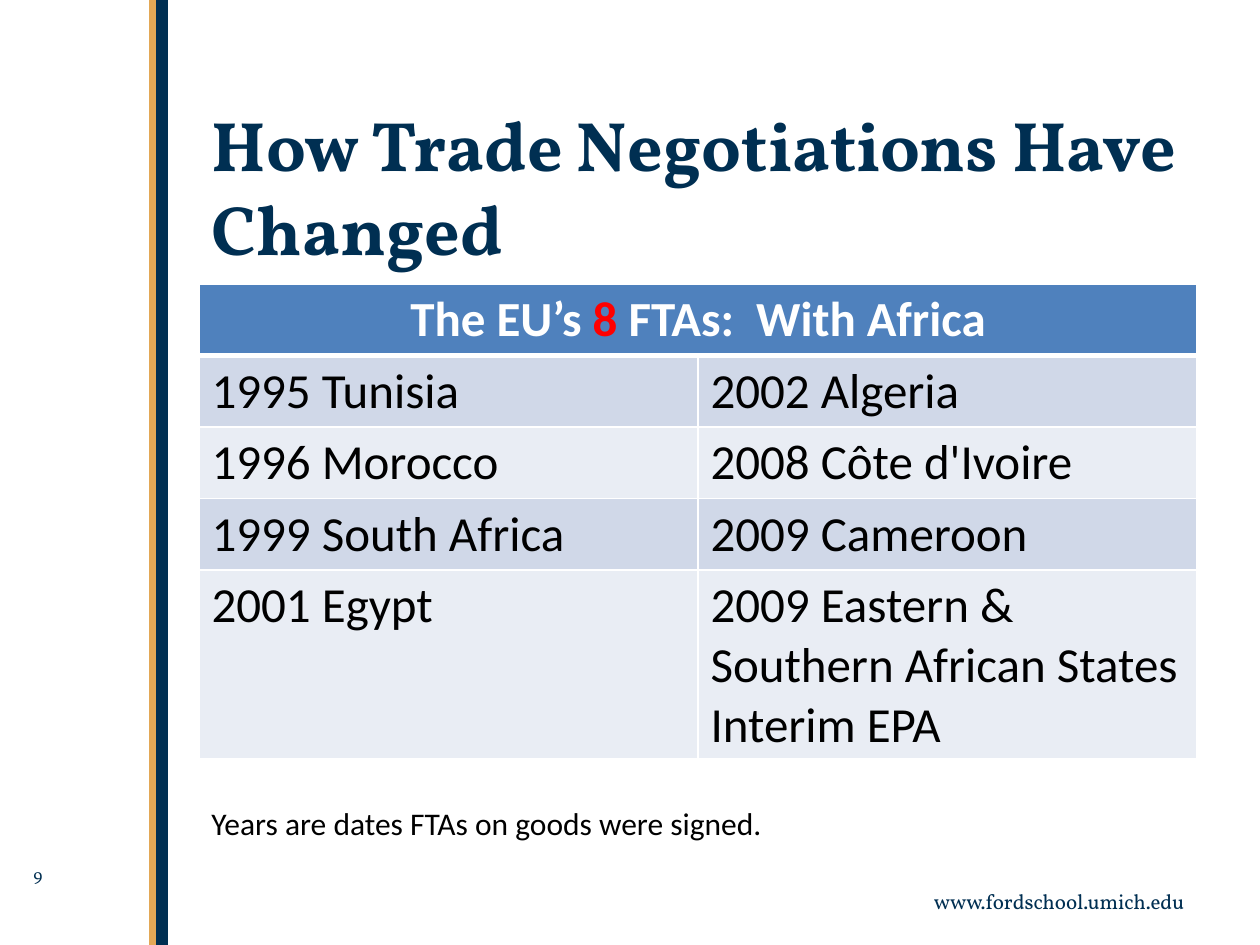
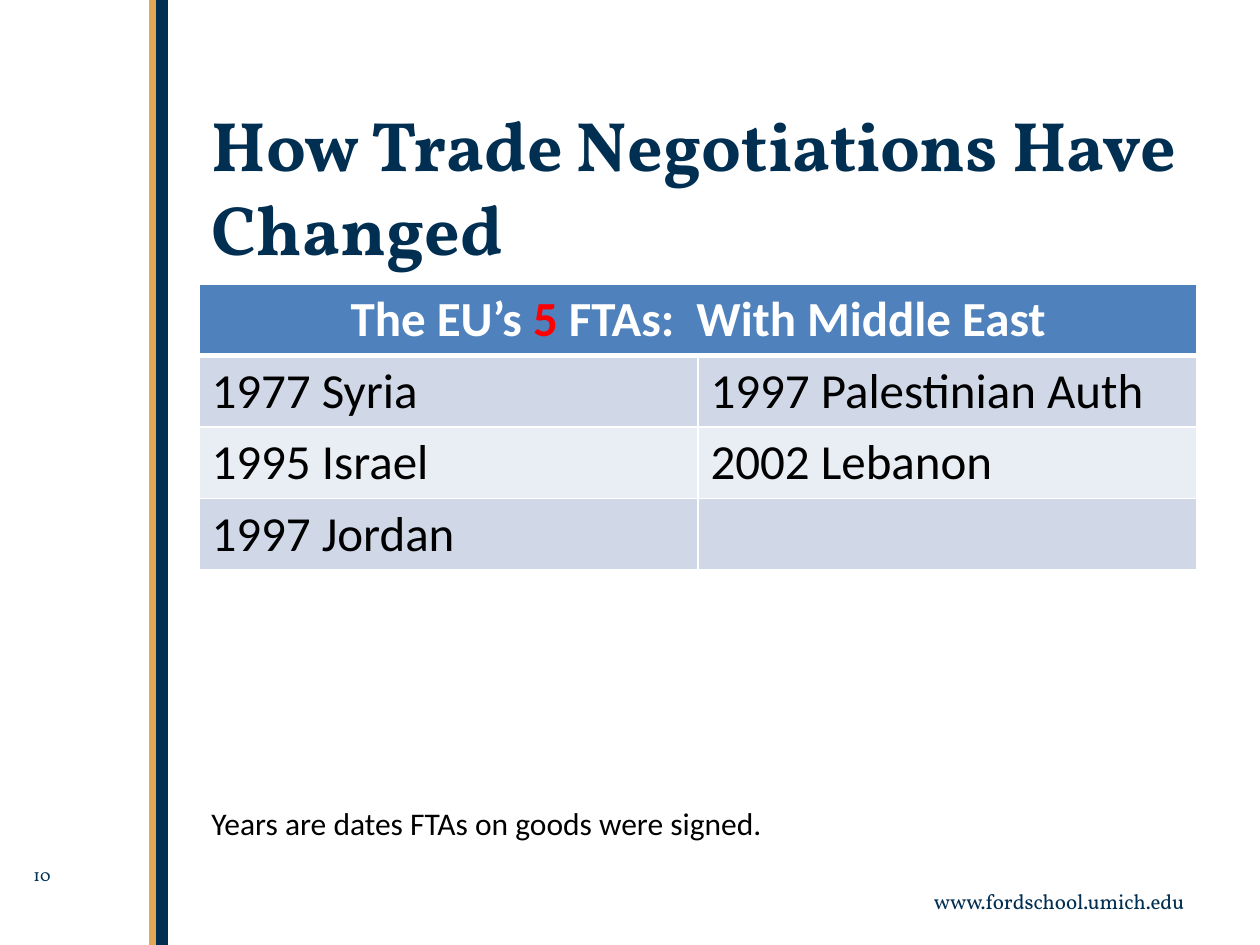
from lxml.etree import SubElement
from pptx import Presentation
from pptx.dml.color import RGBColor
from pptx.enum.shapes import MSO_SHAPE as SHAPE
from pptx.enum.text import MSO_ANCHOR as ANCHOR, MSO_AUTO_SIZE as AUTO, PP_ALIGN as ALIGN
from pptx.oxml.ns import qn
from pptx.util import Emu, Pt

PX_PER_INCH = 126
COLORS = {
    "navy": "002F52", "gold": "E3A856", "white": "FFFFFF", "black": "000000",
    "red": "FF0000", "header": "4F81BD", "odd": "D0D8E8", "even": "E9EDF4",
}
TITLE = dict(name="Vollkorn", size=Pt(40), bold=True)
FOOTER = dict(name="Vollkorn", size=Pt(12))
NUMBER = dict(name="Vollkorn", size=Pt(10))
NOTE = dict(name="Calibri", size=Pt(18))
HEADER = dict(name="Calibri", size=Pt(28), bold=True)
BODY = dict(name="Calibri", size=Pt(28), bold=False)
LEFT, WIDTH, ROW = 199, 998, 71

SLIDES = [
    (9, 8, "Africa", [
        ("1995 Tunisia", "2002 Algeria"),
        ("1996 Morocco", "2008 Côte d'Ivoire"),
        ("1999 South Africa", "2009 Cameroon"),
        ("2001 Egypt", "2009 Eastern & Southern African States Interim EPA"),
    ], 189),
    (10, 5, "Middle East", [
        ("1977 Syria", "1997 Palestinian Auth"),
        ("1995 Israel", "2002 Lebanon"),
        ("1997 Jordan", ""),
    ], ROW),
]


def px(n):
    return Emu(round(n * 914400 / PX_PER_INCH))


def rgb(color):
    return RGBColor.from_string(COLORS[color])


def add_run(p, text, fmt, color):
    r = p.add_run()
    r.text = text
    for name, value in fmt.items():
        setattr(r.font, name, value)
    r.font.color.rgb = rgb(color)


def add_band(s, x, width, color):
    sp = s.shapes.add_shape(SHAPE.RECTANGLE, px(x), 0, px(width), px(945))
    sp.shadow.inherit = False
    sp.fill.solid()
    sp.fill.fore_color.rgb = rgb(color)
    sp.line.fill.background()


def add_text(s, box, text, fmt, color, align=ALIGN.LEFT):
    tf = s.shapes.add_textbox(*map(px, box)).text_frame
    tf.word_wrap = True
    p = tf.paragraphs[0]
    p.alignment = align
    add_run(p, text, fmt, color)


def set_title(s, text):
    sp = s.shapes.title
    sp.left, sp.top, sp.width, sp.height = map(px, (LEFT, 95, WIDTH, 155))
    tf = sp.text_frame
    tf.vertical_anchor = ANCHOR.TOP
    tf.auto_size = AUTO.NONE
    p = tf.paragraphs[0]
    p.alignment = ALIGN.LEFT
    add_run(p, text, TITLE, "navy")


def style_cell(cell, fill, top=1, bottom=1):
    tc_pr = cell._tc.get_or_add_tcPr()
    for side, points in zip("LRTB", (1, 1, top, bottom)):
        ln = SubElement(tc_pr, qn(f"a:ln{side}"), w=str(Pt(points)))
        line_fill = SubElement(ln, qn("a:solidFill"))
        SubElement(line_fill, qn("a:srgbClr"), val=COLORS["white"])
    cell.fill.solid()
    cell.fill.fore_color.rgb = rgb(fill)


def add_agreements(s, count, region, rows, last_height):
    heights = [ROW] * len(rows) + [last_height]
    table = s.shapes.add_table(len(heights), 2, px(LEFT), px(284),
                               px(WIDTH), px(sum(heights))).table
    for row, height in zip(table.rows, heights):
        row.height = px(height)
    for cell in table.rows[0].cells:
        style_cell(cell, "header", bottom=3)
    table.cell(0, 0).merge(table.cell(0, 1))
    p = table.cell(0, 0).text_frame.paragraphs[0]
    p.alignment = ALIGN.CENTER
    for text, color in (("The EU’s ", "white"), (str(count), "red"),
                        (f" FTAs:  With {region}", "white")):
        add_run(p, text, HEADER, color)
    for i, row in enumerate(rows, 1):
        for j, text in enumerate(row):
            cell = table.cell(i, j)
            style_cell(cell, "odd" if i % 2 else "even", top=3 if i == 1 else 1)
            if text:
                add_run(cell.text_frame.paragraphs[0], text, BODY, "black")


def add_frame(s, number):
    add_band(s, 155, 13, "navy")
    add_band(s, 149, 7, "gold")
    add_text(s, (882, 882, 315, 38), "www.fordschool.umich.edu", FOOTER, "navy", ALIGN.RIGHT)
    add_text(s, (21, 858, 116, 43), str(number), NUMBER, "navy")


def main():
    prs = Presentation()
    prs.slide_width, prs.slide_height = px(1260), px(945)
    for number, count, region, rows, last_height in SLIDES:
        s = prs.slides.add_slide(prs.slide_layouts[5])
        add_frame(s, number)
        set_title(s, "How Trade Negotiations Have Changed")
        add_agreements(s, count, region, rows, last_height)
        add_text(s, (LEFT, 798, 850, 50), "Years are dates FTAs on goods were signed.", NOTE, "black")
    prs.save("out.pptx")


if __name__ == "__main__":
    main()
